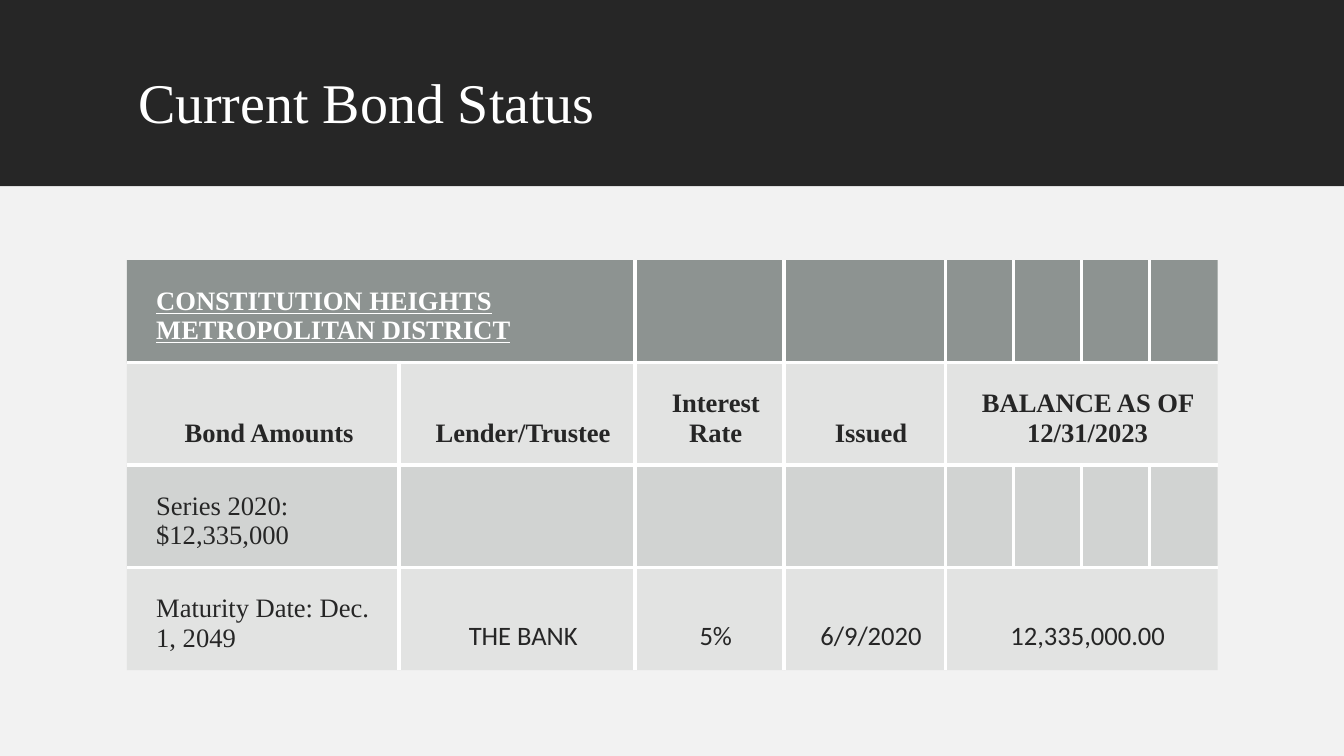
"""Build the bond status slide with its table of amounts, lender and balance."""
from lxml.etree import SubElement
from pptx import Presentation
from pptx.dml.color import RGBColor
from pptx.enum.shapes import MSO_SHAPE as Shape
from pptx.enum.text import MSO_ANCHOR as Anchor, PP_ALIGN as Align
from pptx.oxml.ns import qn
from pptx.util import Pt

TITLE = "Current Bond Status"
COLORS = {"header": "262626", "panel": "F2F2F2", "white": "FFFFFF",
          "heading": "636B68", "band": "878E8B"}
SERIF, SANS = "Times New Roman", "Calibri"
ROWS = [
    {0: "CONSTITUTION HEIGHTS METROPOLITAN DISTRICT"},
    {0: "Bond Amounts", 1: "Lender/Trustee", 2: "Interest Rate", 3: "Issued",
     4: "BALANCE AS OF 12/31/2023"},
    {0: "Series 2020: $12,335,000"},
    {0: "Maturity Date: Dec. 1, 2049", 1: "THE BANK", 2: "5%", 3: "6/9/2020",
     4: "12,335,000.00"},
]
ROW_FILLS = [("heading", 70), ("band", 15), ("band", 30), ("band", 15)]
MERGES = [(0, 0, 1), (1, 4, 7), (3, 4, 7)]
COLUMN_WIDTHS = [194.4, 168.5, 106.6, 115.2] + [48.6] * 4
ROW_HEIGHT = 73.2
WIDTH, HEIGHT, HEADER_HEIGHT = 960, 540, 133.2


def rgb(name):
    return RGBColor.from_string(COLORS[name])


def add_band(page, top, height, color):
    band = page.shapes.add_shape(Shape.RECTANGLE, 0, Pt(top), Pt(WIDTH), Pt(height))
    band.shadow.inherit = False
    band.fill.solid()
    band.fill.fore_color.rgb = rgb(color)
    band.line.fill.background()


def write(para, text, size, font, color, bold=False, underline=False):
    span = para.add_run()
    span.text = text
    span.font.size, span.font.name = Pt(size), font
    span.font.bold, span.font.underline = bold, underline
    span.font.color.rgb = rgb(color)


def fill_cell(cell, color, opacity):
    cell.fill.solid()
    cell.fill.fore_color.rgb = rgb(color)
    tint = cell.fill._xPr.find(".//" + qn("a:srgbClr"))
    SubElement(tint, qn("a:alpha"), val=str(opacity * 1000))


def set_borders(cell, sides):
    properties = cell._tc.get_or_add_tcPr()
    for index, (side, visible) in enumerate(sides.items()):
        line = SubElement(properties, qn("a:ln" + side), w=str(Pt(3)))
        if visible:
            paint = SubElement(line, qn("a:solidFill"))
            SubElement(paint, qn("a:srgbClr"), val=COLORS["white"])
        else:
            SubElement(line, qn("a:noFill"))
        properties.insert(index, line)


def add_bond_table(page):
    row_count, column_count = len(ROWS), len(COLUMN_WIDTHS)
    frame = page.shapes.add_table(row_count, column_count, Pt(90.7), Pt(185.8),
                                  Pt(sum(COLUMN_WIDTHS)), Pt(ROW_HEIGHT * row_count))
    table = frame.table
    table.first_row = table.horz_banding = False
    for column, width in zip(table.columns, COLUMN_WIDTHS):
        column.width = Pt(width)
    for row_index, texts in enumerate(ROWS):
        table.rows[row_index].height = Pt(ROW_HEIGHT)
        for column_index in range(column_count):
            cell = table.cell(row_index, column_index)
            fill_cell(cell, *ROW_FILLS[row_index])
            set_borders(cell, {"L": column_index > 0, "R": column_index < column_count - 1,
                               "T": row_index > 0, "B": row_index < row_count - 1})
            if column_index in texts:
                fill_text(cell, row_index, column_index, texts[column_index])
    for row_index, first, last in MERGES:
        table.cell(row_index, first).merge(table.cell(row_index, last))
        if last == column_count - 1:
            edge = table.cell(row_index, first)._tc.tcPr.find(qn("a:lnR"))
            edge.remove(edge[0])
            SubElement(edge, qn("a:noFill"))


def fill_text(cell, row_index, column_index, text):
    cell.vertical_anchor = Anchor.BOTTOM
    cell.margin_left = Pt(20.9)
    cell.margin_top = cell.margin_right = cell.margin_bottom = Pt(12.2)
    para = cell.text_frame.paragraphs[0]
    centred = row_index == 1 or column_index > 0
    para.alignment = Align.CENTER if centred else Align.LEFT
    font = SANS if row_index == 3 and column_index > 0 else SERIF
    write(para, text, 19, font, "white" if row_index == 0 else "header",
          bold=row_index < 2, underline=row_index == 0)


def main():
    deck = Presentation()
    deck.slide_width, deck.slide_height = Pt(WIDTH), Pt(HEIGHT)
    page = deck.slides.add_slide(deck.slide_layouts[5])
    add_band(page, 0, HEADER_HEIGHT, "header")
    add_band(page, HEADER_HEIGHT, HEIGHT - HEADER_HEIGHT, "panel")
    title = page.shapes.title
    page.shapes._spTree.append(title._element)
    title.left, title.top, title.width, title.height = Pt(91.4), Pt(50.4), Pt(778.3), Pt(70.6)
    title.text_frame.vertical_anchor = Anchor.TOP
    para = title.text_frame.paragraphs[0]
    para.alignment, para.line_spacing = Align.LEFT, 0.9
    write(para, TITLE, 40, SERIF, "white")
    add_bond_table(page)
    deck.save("out.pptx")


if __name__ == "__main__":
    main()
